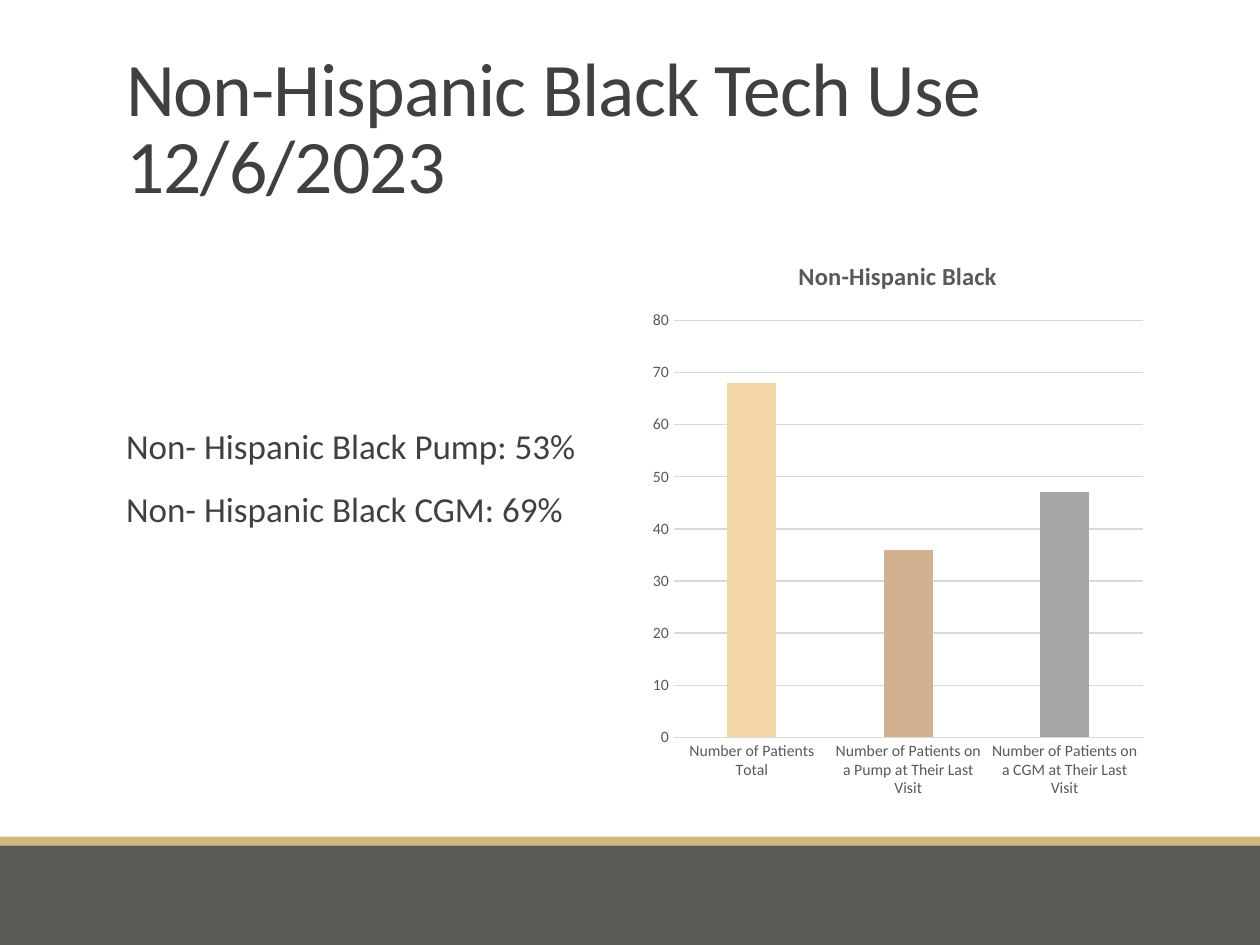
from lxml.etree import SubElement
from pptx import Presentation
from pptx.chart.data import CategoryChartData
from pptx.dml.color import RGBColor
from pptx.enum.chart import XL_CHART_TYPE as ChartType, XL_TICK_MARK as TickMark
from pptx.enum.shapes import MSO_SHAPE as Shape
from pptx.enum.text import MSO_ANCHOR as Anchor, MSO_AUTO_SIZE as AutoSize, PP_ALIGN as Align
from pptx.oxml.ns import qn
from pptx.util import Inches, Pt

# Content
TITLE = "Non-Hispanic Black Tech Use 12/6/2023"
RATES = ["Non- Hispanic Black Pump: 53%", "Non- Hispanic Black CGM: 69%"]
CHART_TITLE = "Non-Hispanic Black"
COUNTS = [
    ("Number of Patients Total", 68, RGBColor(0xF3, 0xD6, 0xA8)),
    ("Number of Patients on a Pump at Their Last Visit", 36, RGBColor(0xD2, 0xB1, 0x91)),
    ("Number of Patients on a CGM at Their Last Visit", 47, RGBColor(0xA6, 0xA6, 0xA6)),
]

# Style
FONT = "Calibri"
INK = RGBColor(0x40, 0x40, 0x40)
CHART_INK = RGBColor(0x59, 0x59, 0x59)
GRID = RGBColor(0xD9, 0xD9, 0xD9)
GOLD = RGBColor(0xCF, 0xB8, 0x7C)
SLATE = RGBColor(0x59, 0x59, 0x55)

# Layout, in inches
WIDTH, HEIGHT = 10, 7.5
LEFT, CONTENT_TOP = 0.9, 1.88
COLUMN_WIDTH, COLUMN_HEIGHT, COLUMN_GAP = 4.05, 4.54, 0.15
BANDS = [(6.71, 0.79, SLATE), (6.64, 0.07, GOLD)]


def style_font(font, size, color, bold=False):
    font.name, font.size, font.bold = FONT, Pt(size), bold
    font.color.rgb = color


def place(shape, left, top, width, height):
    shape.left, shape.top = Inches(left), Inches(top)
    shape.width, shape.height = Inches(width), Inches(height)


def write(para, text, size=20, color=INK, line=0.9, before=0, after=0, spacing=None):
    para.alignment = Align.LEFT
    para.line_spacing = line
    para.space_before, para.space_after = Pt(before), Pt(after)
    span = para.add_run()
    span.text = text
    style_font(span.font, size, color)
    if spacing is not None:
        span.font._element.set("spc", str(int(spacing * 100)))


def hang(para, indent):
    """Hanging indent with a blank bullet."""
    props = para._p.get_or_add_pPr()
    props.set("marL", str(Inches(indent)))
    props.set("indent", str(-Inches(indent)))
    SubElement(props, qn("a:buChar")).set("char", " ")


deck = Presentation()
deck.slide_width, deck.slide_height = Inches(WIDTH), Inches(HEIGHT)
page = deck.slides.add_slide(deck.slide_layouts[1])

# Footer bands
for top, height, color in BANDS:
    band = page.shapes.add_shape(Shape.RECTANGLE, 0, Inches(top), Inches(WIDTH), Inches(height))
    band.shadow.inherit = False
    band.fill.solid()
    band.fill.fore_color.rgb = color
    band.line.fill.background()

# Title
title = page.shapes.title
place(title, LEFT, 0.31, 2 * COLUMN_WIDTH + COLUMN_GAP, 1.4)
frame = title.text_frame
frame.auto_size, frame.word_wrap = AutoSize.NONE, True
frame.vertical_anchor = Anchor.BOTTOM
write(frame.paragraphs[0], TITLE, size=43.2, line=0.85, spacing=-0.5)

# Usage rates
body = page.placeholders[1]
place(body, LEFT, CONTENT_TOP, COLUMN_WIDTH, COLUMN_HEIGHT)
frame = body.text_frame
frame.auto_size, frame.word_wrap = AutoSize.NONE, True
frame.vertical_anchor = Anchor.TOP
frame.margin_left = frame.margin_right = 0
frame.margin_top = Inches(1.53)
for index, rate in enumerate(RATES):
    para = frame.add_paragraph() if index else frame.paragraphs[0]
    hang(para, 0.1)
    write(para, rate, before=12 if index else 0, after=2)

# Chart of patient counts
names, values, colors = zip(*COUNTS)
data = CategoryChartData()
data.categories = names
data.add_series(CHART_TITLE, values)
chart = page.shapes.add_chart(
    ChartType.COLUMN_CLUSTERED, Inches(LEFT + COLUMN_WIDTH + COLUMN_GAP), Inches(CONTENT_TOP),
    Inches(COLUMN_WIDTH), Inches(COLUMN_HEIGHT), data).chart
style_font(chart.font, 10, CHART_INK)
chart.has_legend = False
chart.has_title = True
heading = chart.chart_title.text_frame
heading.text = CHART_TITLE
style_font(heading.paragraphs[0].runs[0].font, 14, CHART_INK, bold=True)

plot = chart.plots[0]
plot.gap_width, plot.overlap = 219, -27
plot.vary_by_categories = False
for index, color in enumerate(colors):
    fill = plot.series[0].points[index].format.fill
    fill.solid()
    fill.fore_color.rgb = color

# Axes
for axis in (chart.category_axis, chart.value_axis):
    axis.major_tick_mark = axis.minor_tick_mark = TickMark.NONE
    style_font(axis.tick_labels.font, 9, CHART_INK)
value_axis = chart.value_axis
value_axis.minimum_scale, value_axis.maximum_scale, value_axis.major_unit = 0, 80, 10
value_axis.has_major_gridlines = True
value_axis.format.line.fill.background()
for line in (chart.category_axis.format.line, value_axis.major_gridlines.format.line):
    line.color.rgb = GRID
    line.width = Pt(0.75)

deck.save("out.pptx")
